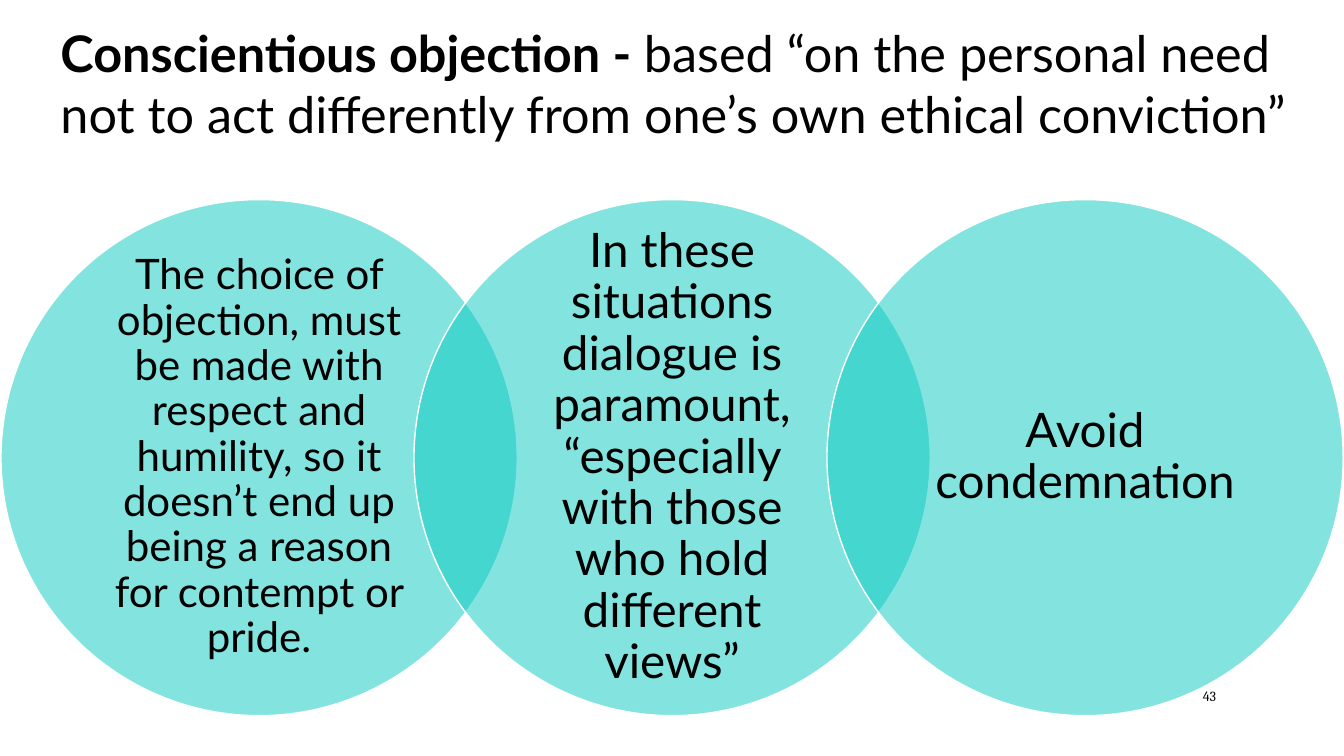
from lxml import etree
from pptx import Presentation
from pptx.dml.color import RGBColor
from pptx.enum.shapes import MSO_SHAPE
from pptx.enum.text import MSO_ANCHOR, MSO_AUTO_SIZE, PP_ALIGN
from pptx.oxml.ns import qn
from pptx.util import Inches, Pt

OVAL = MSO_SHAPE.OVAL
TOP, MIDDLE = MSO_ANCHOR.TOP, MSO_ANCHOR.MIDDLE
LEFT, CENTER, RIGHT = PP_ALIGN.LEFT, PP_ALIGN.CENTER, PP_ALIGN.RIGHT
FIT_SHAPE = MSO_AUTO_SIZE.SHAPE_TO_FIT_TEXT

TEAL = RGBColor(0x08, 0xCA, 0xC1)
WHITE = RGBColor(0xFF, 0xFF, 0xFF)
BLACK = RGBColor(0x00, 0x00, 0x00)

DIAMETER = 5.12
PITCH = DIAMETER * 0.8
CIRCLES = [
    ("The choice of objection, must be made with respect and humility, "
     "so it doesn’t end up being a reason for contempt or pride.", 30),
    ("In these situations dialogue is paramount, “especially with those "
     "who hold different views”", 34),
    ("Avoid condemnation", 34),
]


def style_run(r, size, name="Lato", bold=False):
    r.font.size = Pt(size)
    r.font.name = name
    r.font.bold = bold
    r.font.color.rgb = BLACK


def add_title(s, left, top, width, height):
    title = s.shapes.title
    title.left, title.top = Inches(left), Inches(top)
    title.width, title.height = Inches(width), Inches(height)
    tf = title.text_frame
    tf.word_wrap = True
    tf.auto_size = FIT_SHAPE
    tf.vertical_anchor = TOP
    p = tf.paragraphs[0]
    p.alignment = LEFT
    for text, bold in [
        ("Conscientious objection - ", True),
        ("based “on the personal need not to act differently "
         "from one’s own ethical conviction”", False),
    ]:
        r = p.add_run()
        r.text = text
        style_run(r, 36, bold=bold)


def add_circle(s, left, top, text, size):
    sp = s.shapes.add_shape(OVAL, Inches(left), Inches(top),
                            Inches(DIAMETER), Inches(DIAMETER))
    sp.shadow.inherit = False
    sp.fill.solid()
    sp.fill.fore_color.rgb = TEAL
    color = sp.fill._xPr.find(qn("a:solidFill"))[0]
    etree.SubElement(color, qn("a:alpha"), val="50000")
    sp.line.color.rgb = WHITE
    sp.line.width = Pt(1)

    tf = sp.text_frame
    tf.word_wrap = True
    tf.vertical_anchor = MIDDLE
    tf.margin_left = tf.margin_right = Inches(0.28)
    tf.margin_top = tf.margin_bottom = Inches(0.05)
    tf.text = text
    p = tf.paragraphs[0]
    p.alignment = CENTER
    p.line_spacing = 0.9
    style_run(p.runs[0], size)


def add_venn(s, left, top):
    for i, (text, size) in enumerate(CIRCLES):
        add_circle(s, left + i * PITCH, top, text, size)


def add_page_number(s, left, top, width, height):
    box = s.shapes.add_textbox(Inches(left), Inches(top),
                               Inches(width), Inches(height))
    tf = box.text_frame
    tf.word_wrap = True
    tf.vertical_anchor = MIDDLE
    tf.text = "43"
    p = tf.paragraphs[0]
    p.alignment = RIGHT
    style_run(p.runs[0], 10, "Cambria")


def main():
    prs = Presentation()
    prs.slide_width, prs.slide_height = Inches(13.33), Inches(7.5)
    s = prs.slides.add_slide(prs.slide_layouts[5])
    add_page_number(s, 11.08, 6.75, 1.08, 0.3)
    add_title(s, 0.5, 0.17, 12.42, 1.31)
    add_venn(s, 0.01, 1.98)
    prs.save("out.pptx")


if __name__ == "__main__":
    main()
